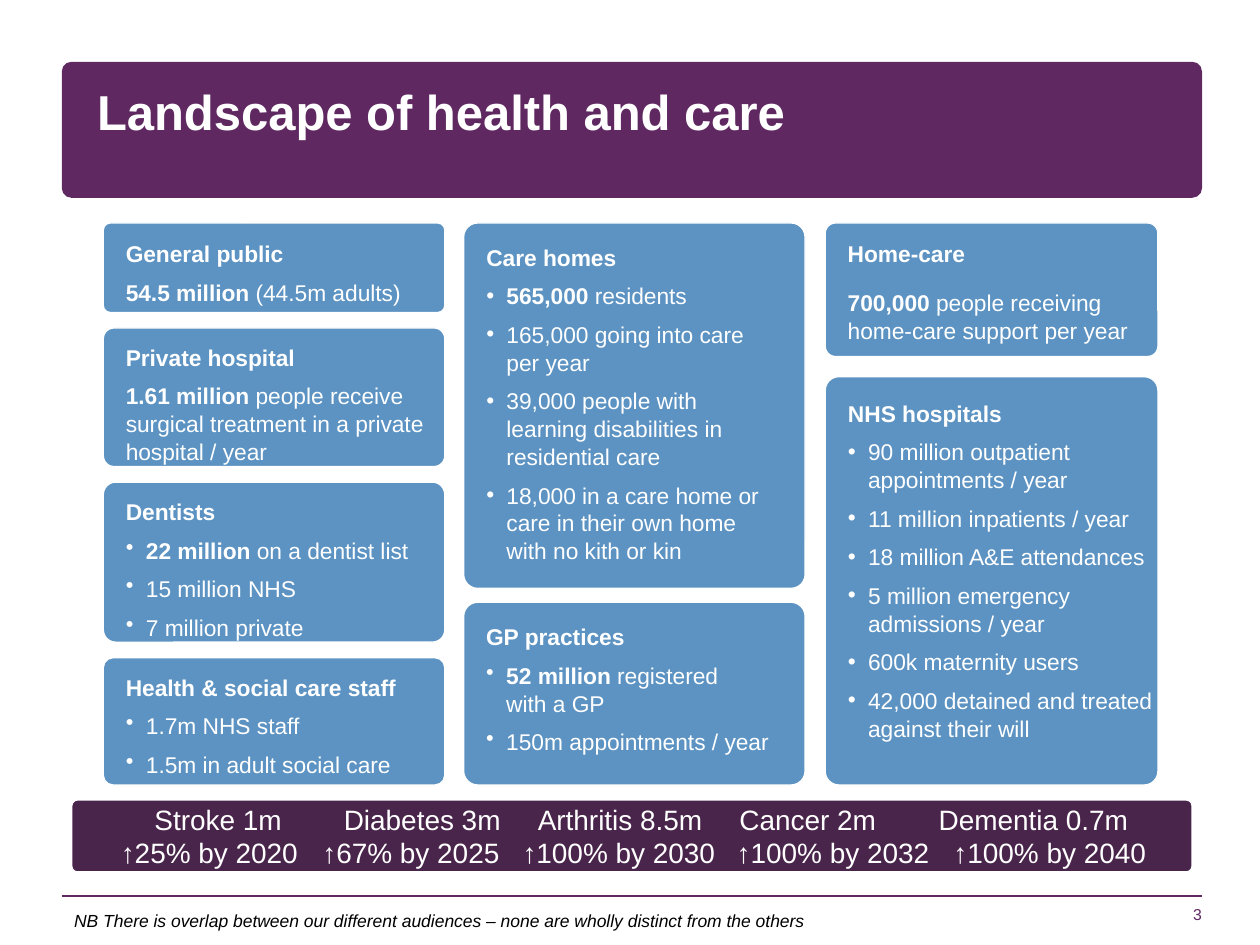
import dataclasses

import pptx
import pptx.dml.color
import pptx.enum.shapes
import pptx.enum.text
import pptx.oxml
import pptx.oxml.ns
import pptx.util
from lxml import etree

ALIGN = pptx.enum.text.PP_ALIGN
ANCHOR = pptx.enum.text.MSO_ANCHOR
SHAPES = pptx.enum.shapes.MSO_SHAPE

# The slide is a grid of 100 columns by 75 rows; every length counts its cells.
COLUMNS, ROWS = 100, 75
CELL = pptx.util.Inches(0.1)


@dataclasses.dataclass(frozen=True)
class Theme:
    font: str = "Arial"
    purple: str = "5F2861"
    dark_purple: str = "4A254B"
    blue: str = "5C93C2"
    white: str = "FFFFFF"
    black: str = "000000"
    title_size: int = 28
    bar_size: int = 16
    card_size: int = 13
    note_size: int = 10
    number_size: int = 9


THEME = Theme()


@dataclasses.dataclass(frozen=True)
class Box:
    left: float
    top: float
    width: float
    height: float

    def within(self, left, top, width, height):
        return Box(self.left + left, self.top + top, width, height)

    def lengths(self):
        return [cells(n) for n in (self.left, self.top, self.width, self.height)]


@dataclasses.dataclass(frozen=True)
class Card:
    heading: str
    lines: tuple  # pairs of bold and regular text
    height: float
    bulleted: bool = True
    text_top: float = 0.7
    text_width: float = 26.4
    heading_spacing: int = 16
    gap_after: int = 6
    corner: float = 0.077
    placeholder: int = 0


STACKS = [
    (8.2, 27.1, [
        Card("General public", (("54.5 million ", "(44.5m adults)"),), 7.1,
             bulleted=False, text_top=0.8),
        Card("Private hospital", (("1.61 million ", "people receive surgical treatment "
                                   "in a private hospital / year"),), 11, bulleted=False),
        Card("Dentists", (("22 million", " on a dentist list"), ("", "15 million NHS"),
                          ("", "7 million private")), 12.7),
        Card("Health & social care staff", (("", "1.7m NHS staff"),
                                            ("", "1.5m in adult social care")), 10.1),
    ]),
    (36.8, 27.1, [
        Card("Care homes", (
            ("565,000 ", "residents"), ("", "165,000 going into care\nper year"),
            ("", "39,000 people with learning disabilities in residential care"),
            ("", "18,000 in a care home or care in their own home with no kith or kin")),
            29, text_top=0.5, text_width=25.3, heading_spacing=20, corner=0.041,
            placeholder=1),
        Card("GP practices", (("52 million ", "registered\nwith a GP"),
                              ("", "150m appointments / year")), 14.5, text_top=1.1),
    ]),
    (65.5, 26.4, [
        Card("Home-care", (("700,000", " people receiving home-care support per year"),),
             10.6, bulleted=False, text_top=0.8, gap_after=12),
        Card("NHS hospitals", (
            ("", "90 million outpatient appointments / year"),
            ("", "11 million inpatients / year"), ("", "18 million A&E attendances"),
            ("", "5 million emergency admissions / year"), ("", "600k maternity users"),
            ("", "42,000 detained and treated against their will")),
            32.4, heading_spacing=20, corner=0.041, placeholder=2),
    ]),
]

# Each row of the bottom bar: the texts and the columns they are centred on.
CONDITIONS = [
    (("Stroke 1m", "Diabetes 3m", "Arthritis 8.5m", "Cancer 2m", "Dementia 0.7m"),
     (10.5, 26.7, 42.4, 57.3, 75.2)),
    (("↑25% by 2020", "↑67% by 2025", "↑100% by 2030", "↑100% by 2032", "↑100% by 2040"),
     (9.8, 25.8, 42.3, 59.3, 76.5)),
]


def cells(count):
    return round(count * CELL)


def color(value):
    return pptx.dml.color.RGBColor.from_string(value)


def add_text(paragraph, text, *, size, fill=THEME.white, bold=False, italic=False):
    """Append text to a paragraph; a newline becomes a line break."""
    for index, part in enumerate(text.split("\n")):
        if index:
            paragraph.add_line_break()
        run = paragraph.add_run()
        run.text = part
        run.font.name, run.font.size = THEME.font, pptx.util.Pt(size)
        run.font.bold, run.font.italic = bold, italic
        run.font.color.rgb = color(fill)


def set_bullet(paragraph, character=None, indent=0.0):
    properties = paragraph._p.get_or_add_pPr()
    properties.set("marL", str(cells(indent)))
    properties.set("indent", str(-cells(indent)))
    if character:
        bullet = etree.SubElement(properties, pptx.oxml.ns.qn("a:buChar"))
        bullet.set("char", character)
    else:
        etree.SubElement(properties, pptx.oxml.ns.qn("a:buNone"))


def set_center_tabs(paragraph, positions):
    tabs = etree.SubElement(paragraph._p.get_or_add_pPr(), pptx.oxml.ns.qn("a:tabLst"))
    for position in positions:
        tab = etree.SubElement(tabs, pptx.oxml.ns.qn("a:tab"))
        tab.set("pos", str(cells(position)))
        tab.set("algn", "ctr")


def prepare_frame(shape, anchor=ANCHOR.TOP):
    frame = shape.text_frame
    frame.word_wrap = True
    frame.auto_size = pptx.enum.text.MSO_AUTO_SIZE.NONE
    frame.vertical_anchor = anchor
    return frame


def add_text_box(slide, box, anchor=ANCHOR.TOP):
    return prepare_frame(slide.shapes.add_textbox(*box.lengths()), anchor)


def place_placeholder(placeholder, box):
    """Move a placeholder into the box and in front of the shapes drawn so far."""
    placeholder.left, placeholder.top, placeholder.width, placeholder.height = box.lengths()
    tree = placeholder.element.getparent()
    tree.append(placeholder.element)
    return prepare_frame(placeholder)


def add_panel(slide, box, fill, corner, line=None):
    panel = slide.shapes.add_shape(SHAPES.ROUNDED_RECTANGLE, *box.lengths())
    panel.adjustments[0] = corner
    panel.shadow.inherit = False
    panel.fill.solid()
    panel.fill.fore_color.rgb = color(fill)
    if line:
        panel.line.color.rgb, panel.line.width = color(line), pptx.util.Pt(0.75)
    else:
        panel.line.fill.background()
    return panel


def add_header(slide, box):
    add_panel(slide, box, THEME.purple, 0.072)
    frame = place_placeholder(slide.shapes.title, box.within(1.8, 1.1, 57.3, 5.7))
    paragraph = frame.paragraphs[0]
    paragraph.alignment = ALIGN.LEFT
    add_text(paragraph, "Landscape of health and care", size=THEME.title_size, bold=True)


def add_card(slide, box, card):
    add_panel(slide, box, THEME.blue, card.corner, THEME.white)
    text_box = box.within(0.8, card.text_top, card.text_width, box.height - card.text_top)
    if card.placeholder:
        frame = place_placeholder(slide.placeholders[card.placeholder], text_box)
    else:
        frame = add_text_box(slide, text_box)
    for index, (bold, regular) in enumerate([(card.heading, ""), *card.lines]):
        paragraph = frame.add_paragraph() if index else frame.paragraphs[0]
        paragraph.line_spacing = pptx.util.Pt(16 if index else card.heading_spacing)
        paragraph.space_before = pptx.util.Pt(0)
        paragraph.space_after = pptx.util.Pt(card.gap_after)
        if index and card.bulleted:
            set_bullet(paragraph, "•", 1.6)
        else:
            set_bullet(paragraph)
        for text, is_bold in ((bold, True), (regular, False)):
            if text:
                add_text(paragraph, text, size=THEME.card_size, bold=is_bold)


def add_stack(slide, box, cards):
    """Stack cards from top to bottom of the box with equal gaps."""
    gap = (box.height - sum(card.height for card in cards)) / (len(cards) - 1)
    top = 0
    for card in cards:
        add_card(slide, box.within(0, top, box.width, card.height), card)
        top += card.height + gap


def add_conditions_bar(slide, box):
    bar = add_panel(slide, box, THEME.dark_purple, 0.077, THEME.white)
    frame = prepare_frame(bar, ANCHOR.MIDDLE)
    frame.margin_top = frame.margin_bottom = 0
    for index, (texts, centers) in enumerate(CONDITIONS):
        paragraph = frame.add_paragraph() if index else frame.paragraphs[0]
        paragraph.alignment = ALIGN.LEFT
        set_center_tabs(paragraph, centers)
        add_text(paragraph, "".join("\t" + text for text in texts), size=THEME.bar_size)


def add_footer(slide, box):
    rule = slide.shapes.add_connector(
        pptx.enum.shapes.MSO_CONNECTOR.STRAIGHT, cells(box.left), cells(box.top),
        cells(box.left + box.width), cells(box.top))
    rule.line.color.rgb, rule.line.width = color(THEME.purple), pptx.util.Pt(1)
    etree.SubElement(rule._element.spPr, pptx.oxml.ns.qn("a:effectLst"))

    number = add_text_box(slide, box.within(box.width - 20.8, -2.8, 20.8, 5), ANCHOR.BOTTOM)
    number.margin_left = number.margin_right = number.margin_top = number.margin_bottom = 0
    number.paragraphs[0].alignment = ALIGN.RIGHT
    add_text(number.paragraphs[0], "3", size=THEME.number_size, fill=THEME.purple)

    note = add_text_box(slide, box.within(0, 1, box.width, 2.3)).paragraphs[0]
    note.line_spacing = 0.75
    add_text(note, "NB There is overlap between our different audiences – none are wholly "
             "distinct from the others", size=THEME.note_size, fill=THEME.black, italic=True)


def main():
    presentation = pptx.Presentation()
    presentation.slide_width, presentation.slide_height = cells(COLUMNS), cells(ROWS)
    slide = presentation.slides.add_slide(presentation.slide_layouts.get_by_name("Two Content"))
    add_header(slide, Box(4.9, 4.9, 90.5, 10.8))
    for left, width, cards in STACKS:
        add_stack(slide, Box(left, 17.7, width, 44.6), cards)
    add_conditions_bar(slide, Box(5.7, 63.5, 88.9, 5.7))
    add_footer(slide, Box(4.9, 71.1, 90.5, 3.3))
    presentation.save("out.pptx")


if __name__ == "__main__":
    main()
